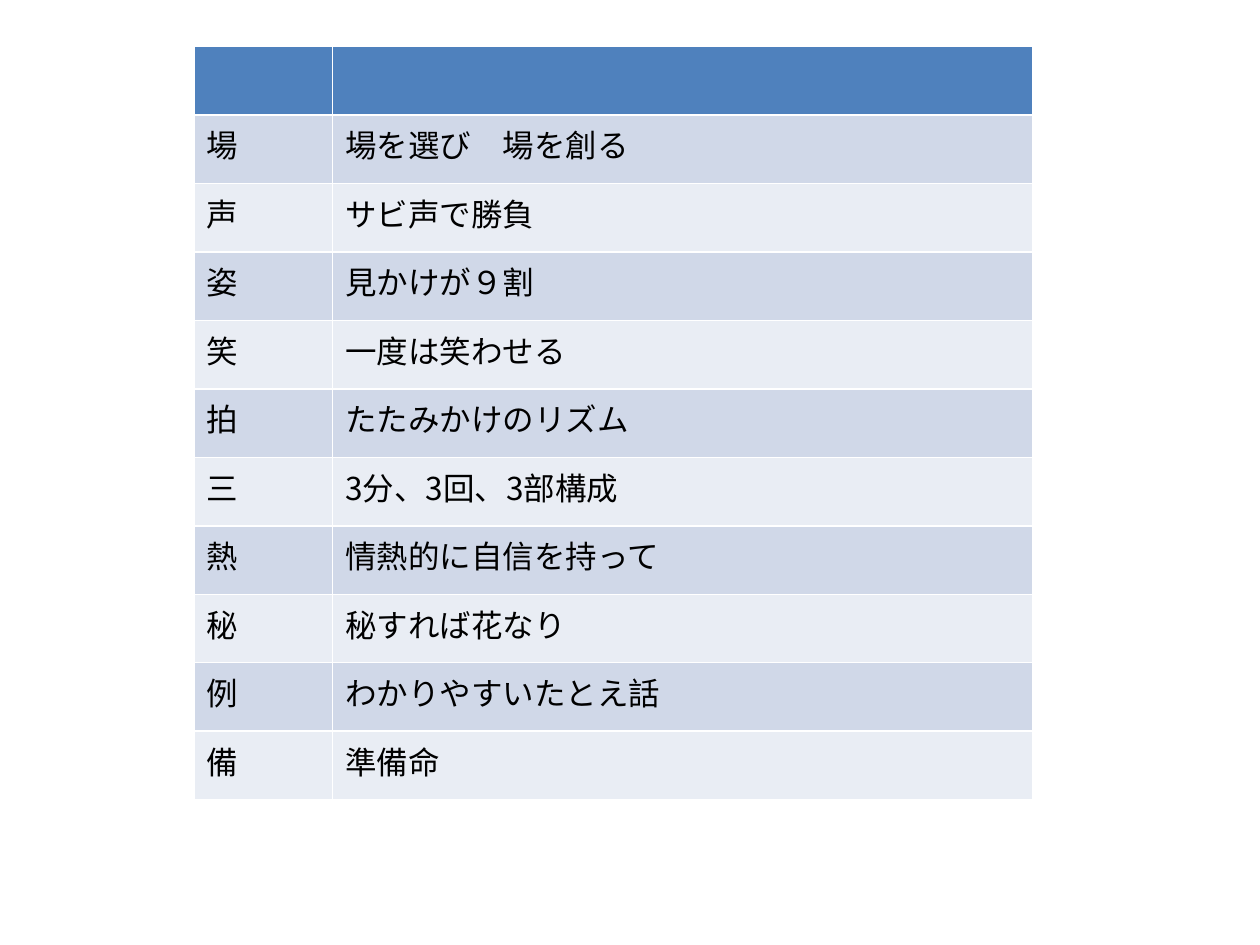
from lxml import etree
from pptx import Presentation
from pptx import util as u
from pptx.dml import color
from pptx.oxml import ns

LESSONS = [
    ("場", "場を選び　場を創る"),
    ("声", "サビ声で勝負"),
    ("姿", "見かけが９割"),
    ("笑", "一度は笑わせる"),
    ("拍", "たたみかけのリズム"),
    ("三", "3分、3回、3部構成"),
    ("熱", "情熱的に自信を持って"),
    ("秘", "秘すれば花なり"),
    ("例", "わかりやすいたとえ話"),
    ("備", "準備命"),
]
ROWS = [("", "")] + LESSONS
COLUMN_WIDTHS = (1.1, 5.56)
LEFT, TOP, HEIGHT = 1.54, 0.37, 5.98
HEADER_FILL = "4F81BD"
BAND_FILLS = ("E9EDF4", "D0D8E8")
TEXT_COLOUR = "000000"
LATIN_FONT, JAPANESE_FONT = "Calibri", "Noto Sans CJK JP"


def paint(fill, colour):
    fill.solid()
    fill.fore_color.rgb = color.RGBColor.from_string(colour)


def write(cell, text):
    run = cell.text_frame.paragraphs[0].add_run()
    run.text = text
    latin = JAPANESE_FONT if text[0].isascii() else LATIN_FONT
    for name, value in {"size": u.Pt(18), "bold": False, "name": latin}.items():
        setattr(run.font, name, value)
    paint(run.font.fill, TEXT_COLOUR)
    properties = run._r.get_or_add_rPr()
    etree.SubElement(properties, ns.qn("a:ea"), typeface=JAPANESE_FONT)


def add_lessons(slide):
    frame = slide.shapes.add_table(
        len(ROWS), len(COLUMN_WIDTHS), u.Inches(LEFT), u.Inches(TOP),
        u.Inches(sum(COLUMN_WIDTHS)), u.Inches(HEIGHT))
    table = frame.table
    for column, width in zip(table.columns, COLUMN_WIDTHS):
        column.width = u.Inches(width)
    for index, texts in enumerate(ROWS):
        fill = BAND_FILLS[index % 2] if index else HEADER_FILL
        for cell, text in zip(table.rows[index].cells, texts):
            paint(cell.fill, fill)
            if text:
                write(cell, text)


def main():
    presentation = Presentation()
    presentation.slide_width = u.Inches(10)
    presentation.slide_height = u.Inches(7.5)
    slide = presentation.slides.add_slide(presentation.slide_layouts[6])
    add_lessons(slide)
    presentation.save("out.pptx")


if __name__ == "__main__":
    main()
